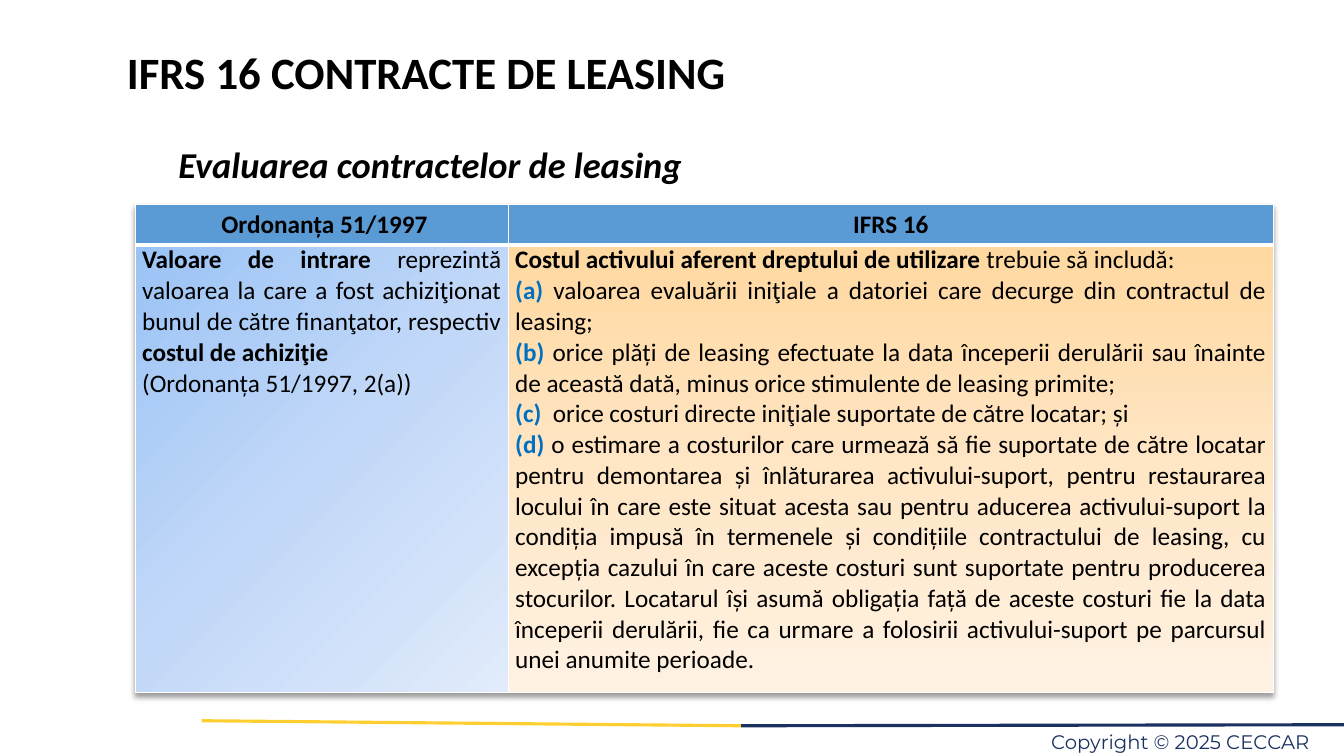
from lxml import etree
from pptx import Presentation
from pptx.dml.color import RGBColor
from pptx.enum.shapes import MSO_CONNECTOR
from pptx.enum.text import PP_ALIGN
from pptx.oxml import parse_xml
from pptx.oxml.ns import nsdecls, qn
from pptx.util import Inches, Pt

COLORS = {
    "black": "000000", "white": "FFFFFF", "yellow": "FFCE31",
    "navy": "1B3260", "header": "5B9BD5", "letter": "0070C0",
}
BLUE_GRADIENT = ["9AC3F5", "C2D8F8", "E1EBFB"]
ORANGE_GRADIENT = ["FFD8A0", "FFE6C5", "FFF2E3"]


def add_text(paragraph, text, size=18, color="black", bold=False,
             italic=False, font="Calibri", align=None, spacing=None):
    run = paragraph.add_run()
    run.text = text
    run.font.name = font
    run.font.size = Pt(size)
    run.font.bold = bold
    run.font.italic = italic
    run.font.color.rgb = RGBColor.from_string(COLORS[color])
    if align is not None:
        paragraph.alignment = align
    if spacing is not None:
        paragraph.line_spacing = spacing


def style_cell(cell, fill_xml, top, bottom):
    properties = cell._tc.get_or_add_tcPr()
    for side, width in (("L", 1), ("R", 1), ("T", top), ("B", bottom)):
        properties.append(parse_xml(
            f'<a:ln{side} {nsdecls("a")} w="{Pt(width)}"><a:solidFill>'
            f'<a:srgbClr val="{COLORS["white"]}"/></a:solidFill></a:ln{side}>'))
    properties.append(parse_xml(fill_xml))


prs = Presentation()
prs.slide_width = Inches(13.33)
prs.slide_height = Inches(7.5)
slide = prs.slides.add_slide(prs.slide_layouts[6])

# Footer rule in two colours
for start, end, color in (((2, 7.15), (7.35, 7.2), "yellow"),
                          ((7.35, 7.2), (13.33, 7.19), "navy")):
    rule = slide.shapes.add_connector(
        MSO_CONNECTOR.STRAIGHT, *map(Inches, start + end))
    rule.line.color.rgb = RGBColor.from_string(COLORS[color])
    rule.line.width = Pt(2.25)
    etree.SubElement(rule._element.spPr, qn("a:effectLst"))

# Title, subtitle and copyright line
texts = [
    ((0, 0.45, 8.46, 0.89), (0.1, 0.05), "IFRS 16 CONTRACTE DE LEASING",
     dict(size=32, bold=True, align=PP_ALIGN.CENTER, spacing=0.9)),
    ((1.67, 1.14, 8.75, 0.8), (0.1, 0.05), "Evaluarea contractelor de leasing",
     dict(size=26, bold=True, italic=True, align=PP_ALIGN.JUSTIFY, spacing=1.5)),
    ((9.11, 7.19, 3.93, 0.27), (0, 0), "Copyright © 2025 CECCAR ",
     dict(size=14, font="Montserrat", color="navy", align=PP_ALIGN.RIGHT,
          spacing=Pt(20.5))),
]
for place, (inset_x, inset_y), text, text_format in texts:
    frame = slide.shapes.add_textbox(*map(Inches, place)).text_frame
    frame.word_wrap = True
    frame.margin_left = frame.margin_right = Inches(inset_x)
    frame.margin_top = frame.margin_bottom = Inches(inset_y)
    add_text(frame.paragraphs[0], text, **text_format)

# Comparison table with a soft shadow
comparison = slide.shapes.add_table(
    2, 2, Inches(1.34), Inches(2.03), Inches(11.29), Inches(4.84)).table
for column, width in zip(comparison.columns, (3.7, 7.59)):
    column.width = Inches(width)
for row, height in zip(comparison.rows, (0.4, 4.44)):
    row.height = Inches(height)
comparison._tbl.tblPr.insert(0, parse_xml(
    f'<a:effectLst {nsdecls("a")}><a:outerShdw blurRad="50800" dist="38100" '
    'dir="5400000" algn="t" rotWithShape="0"><a:srgbClr val="000000">'
    '<a:alpha val="40000"/></a:srgbClr></a:outerShdw></a:effectLst>'))

# Header row
for cell, heading in zip(comparison.rows[0].cells,
                         (" Ordonanța 51/1997", "IFRS 16")):
    add_text(cell.text_frame.paragraphs[0], heading, bold=True,
             align=PP_ALIGN.CENTER)
    style_cell(cell, f'<a:solidFill {nsdecls("a")}><a:srgbClr '
                     f'val="{COLORS["header"]}"/></a:solidFill>', 1, 3)

# Body row: each paragraph is a list of (text, style) runs
BOLD = dict(bold=True)
LETTER = dict(bold=True, color="letter")
PLAIN = {}
ordinance = [
    [("Valoare de intrare ", BOLD),
     ("reprezintă valoarea la care a fost achiziţionat bunul de către "
      "finanţator, respectiv ", PLAIN),
     ("costul de achiziţie ", BOLD)],
    [("(Ordonanța 51/1997, 2(a))", PLAIN)],
]
standard = [
    [("Costul activului aferent dreptului de utilizare ", BOLD),
     ("trebuie să includă:", PLAIN)],
    [("(a) ", LETTER),
     ("valoarea evaluării iniţiale a datoriei care decurge din contractul de "
      "leasing;", PLAIN)],
    [("(b) ", LETTER),
     ("orice plăți de leasing efectuate la data începerii derulării sau înainte "
      "de această dată, minus orice stimulente de leasing primite;", PLAIN)],
    [("(c)  ", LETTER),
     ("orice costuri directe iniţiale suportate de către locatar; și", PLAIN)],
    [("(d) ", LETTER),
     ("o estimare a costurilor care urmează să fie suportate de către locatar "
      "pentru demontarea și înlăturarea activului-suport, pentru restaurarea "
      "locului în care este situat acesta sau pentru aducerea activului-suport "
      "la condiția impusă în termenele și condițiile contractului de leasing, "
      "cu excepția cazului în care aceste costuri sunt suportate pentru "
      "producerea stocurilor. Locatarul își asumă obligația față de aceste "
      "costuri fie la data începerii derulării, fie ca urmare a folosirii "
      "activului-suport pe parcursul unei anumite perioade. ", PLAIN)],
]
bodies = ((ordinance, BLUE_GRADIENT, 45), (standard, ORANGE_GRADIENT, 90))
for cell, (paragraphs, gradient, angle) in zip(comparison.rows[1].cells, bodies):
    cell.margin_left = cell.margin_right = Inches(0.07)
    cell.margin_top = cell.margin_bottom = 0
    frame = cell.text_frame
    for index, runs in enumerate(paragraphs):
        paragraph = frame.add_paragraph() if index else frame.paragraphs[0]
        for text, style in runs:
            add_text(paragraph, text, align=PP_ALIGN.JUSTIFY, **style)
    stops = "".join(
        f'<a:gs pos="{step * 50000}"><a:srgbClr val="{color}"/></a:gs>'
        for step, color in enumerate(gradient))
    style_cell(cell, f'<a:gradFill {nsdecls("a")} rotWithShape="1"><a:gsLst>'
                     f'{stops}</a:gsLst><a:lin ang="{angle * 60000}" '
                     'scaled="0"/></a:gradFill>', 3, 1)

prs.save("out.pptx")
